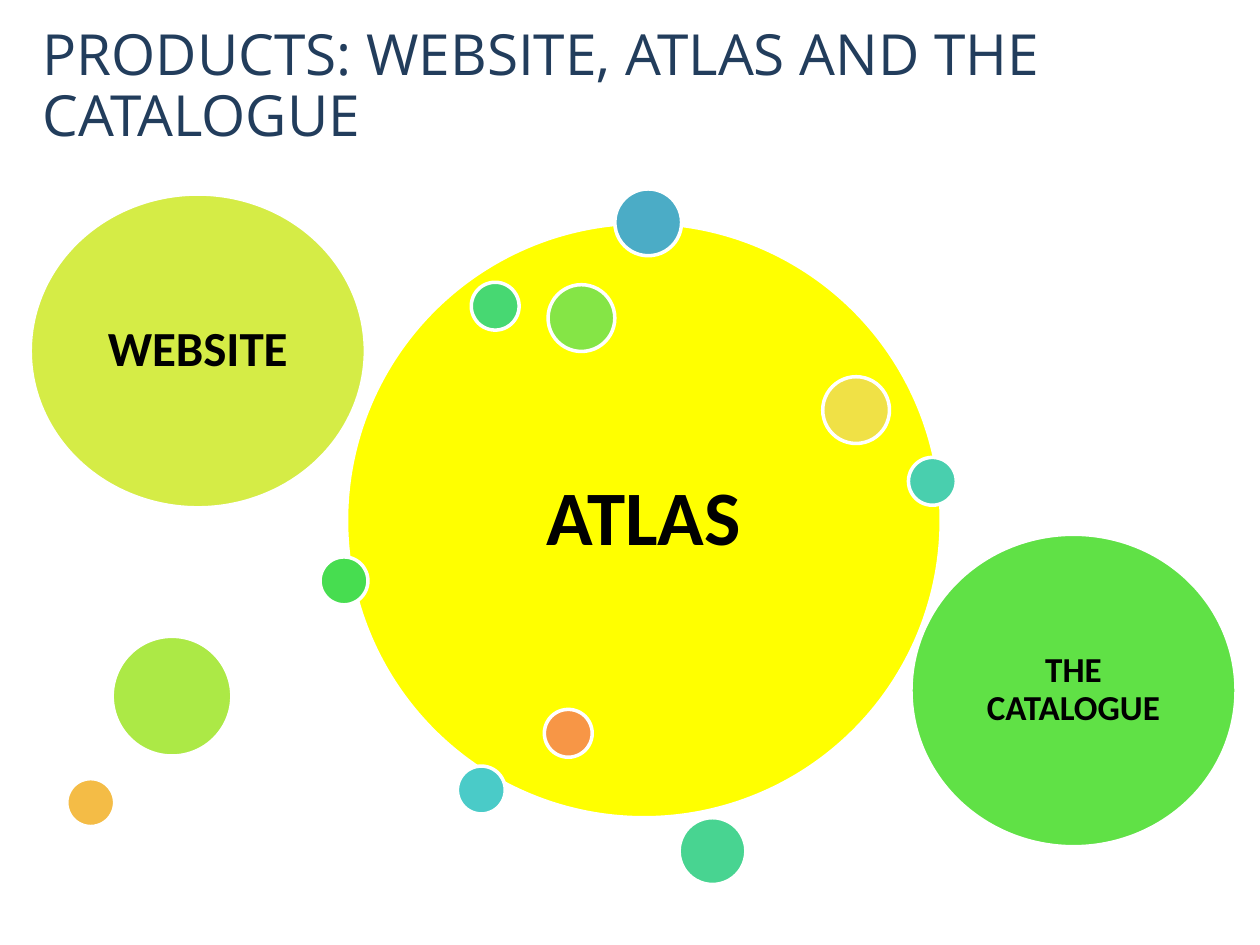
from typing import NamedTuple

from pptx import Presentation
from pptx.dml.color import RGBColor as RGB
from pptx.enum.shapes import MSO_SHAPE as Kind
from pptx.enum.text import MSO_ANCHOR as Anchor, PP_ALIGN as Align
from pptx.util import Inches, Pt

WHITE = RGB(0xFF, 0xFF, 0xFF)
BLACK = RGB(0x00, 0x00, 0x00)
NAVY = RGB(0x22, 0x3D, 0x5C)
YELLOW = RGB(0xFF, 0xFF, 0x00)
BLUE = RGB(0x4B, 0xAC, 0xC6)
CYAN = RGB(0x4A, 0xCB, 0xC8)
TEAL = RGB(0x49, 0xCF, 0xAE)
JADE = RGB(0x48, 0xD4, 0x91)
MINT = RGB(0x47, 0xD8, 0x72)
GREEN = RGB(0x47, 0xDD, 0x50)
GRASS = RGB(0x60, 0xE1, 0x46)
LEAF = RGB(0x85, 0xE5, 0x46)
LIME = RGB(0xAC, 0xE9, 0x46)
PEAR = RGB(0xD5, 0xEC, 0x46)
GOLD = RGB(0xF0, 0xE1, 0x46)
AMBER = RGB(0xF4, 0xBC, 0x46)
ORANGE = RGB(0xF7, 0x96, 0x46)

SMALL = 0.38
MEDIUM = 0.53


class Bubble(NamedTuple):
    left: float
    top: float
    width: float
    height: float
    fill: RGB
    label: str = ""
    size: int = 0
    inset: float = 0


def dot(left: float, top: float, size: float, fill: RGB) -> Bubble:
    return Bubble(left, top, size, size, fill)


BUBBLES = [
    Bubble(2.75, 1.77, 4.72, 4.72, YELLOW, "ATLAS", 44, 0.18),
    dot(4.88, 1.5, MEDIUM, BLUE),
    dot(3.63, 6.08, SMALL, CYAN),
    dot(7.21, 3.63, SMALL, TEAL),
    dot(5.39, 6.49, MEDIUM, JADE),
    dot(3.74, 2.24, SMALL, MINT),
    dot(2.54, 4.42, SMALL, GREEN),
    Bubble(7.23, 4.24, 2.58, 2.48, GRASS, "THE CATALOGUE", 20, 0.08),
    dot(4.35, 2.26, MEDIUM, LEAF),
    dot(0.89, 5.05, 0.95, LIME),
    Bubble(0.24, 1.54, 2.66, 2.49, PEAR, "WEBSITE", 28, 0.12),
    dot(6.53, 2.99, MEDIUM, GOLD),
    dot(0.53, 6.18, SMALL, AMBER),
    dot(4.32, 5.63, SMALL, ORANGE),
]


def write(frame, text: str, face: str, size: float, color: RGB):
    frame.word_wrap = True
    frame.vertical_anchor = Anchor.MIDDLE
    para = frame.paragraphs[0]
    para.text = text
    para.line_spacing = 0.9
    para.font.name = face
    para.font.size = Pt(size)
    para.font.color.rgb = color
    return para


def draw(slide, item: Bubble) -> None:
    shape = slide.shapes.add_shape(Kind.OVAL, *map(Inches, item[:4]))
    shape.shadow.inherit = False
    shape.fill.solid()
    shape.fill.fore_color.rgb = item.fill
    shape.line.color.rgb = WHITE
    shape.line.width = Pt(2)
    if item.label:
        frame = shape.text_frame
        frame.margin_left = frame.margin_right = Inches(item.inset)
        frame.margin_top = frame.margin_bottom = Inches(item.inset)
        para = write(frame, item.label, "Calibri", item.size, BLACK)
        para.alignment = Align.CENTER
        para.font.bold = True


def main() -> None:
    deck = Presentation()
    deck.slide_width, deck.slide_height = Inches(10), Inches(7.5)
    slide = deck.slides.add_slide(deck.slide_layouts[6])
    title = slide.shapes.add_textbox(*map(Inches, (0.24, 0.07, 8.41, 1.25)))
    write(title.text_frame, "PRODUCTS: WEBSITE, ATLAS AND THE CATALOGUE",
          "Open Sans", 32.4, NAVY)
    for item in BUBBLES:
        draw(slide, item)
    deck.save("out.pptx")


if __name__ == "__main__":
    main()
